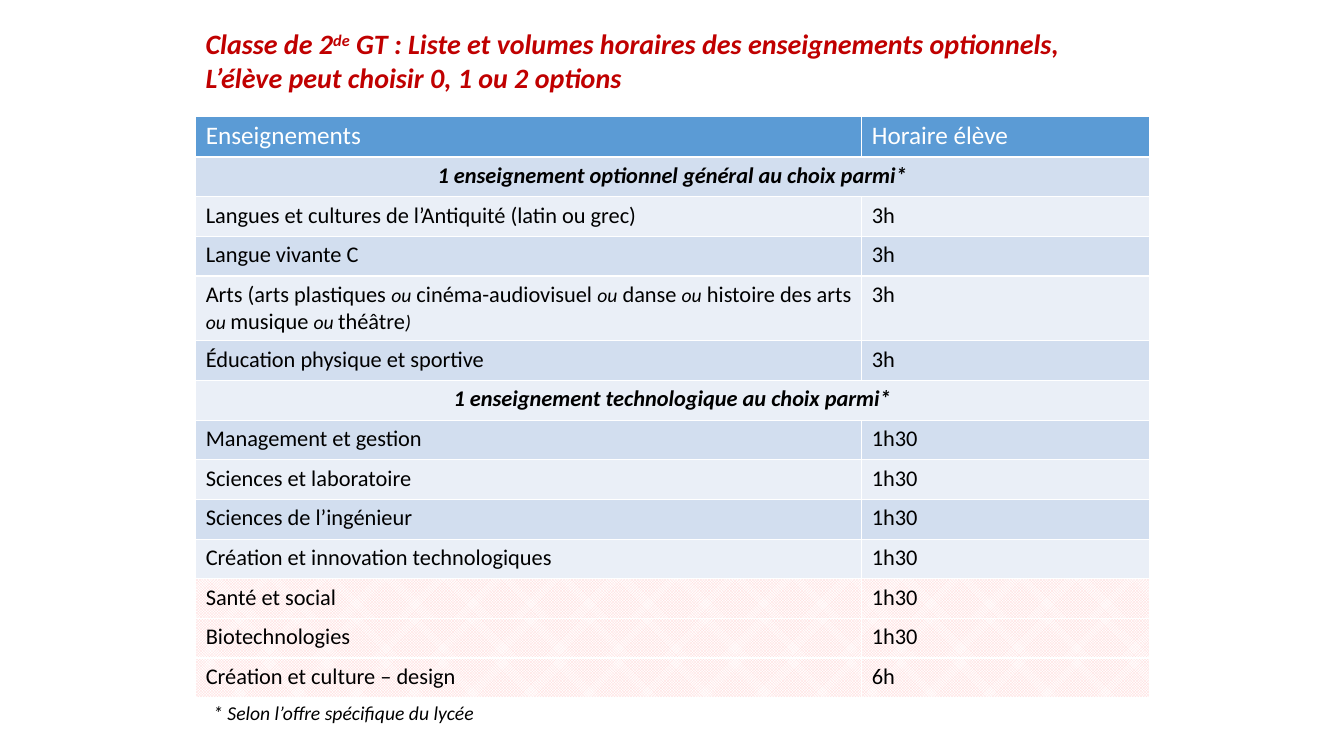
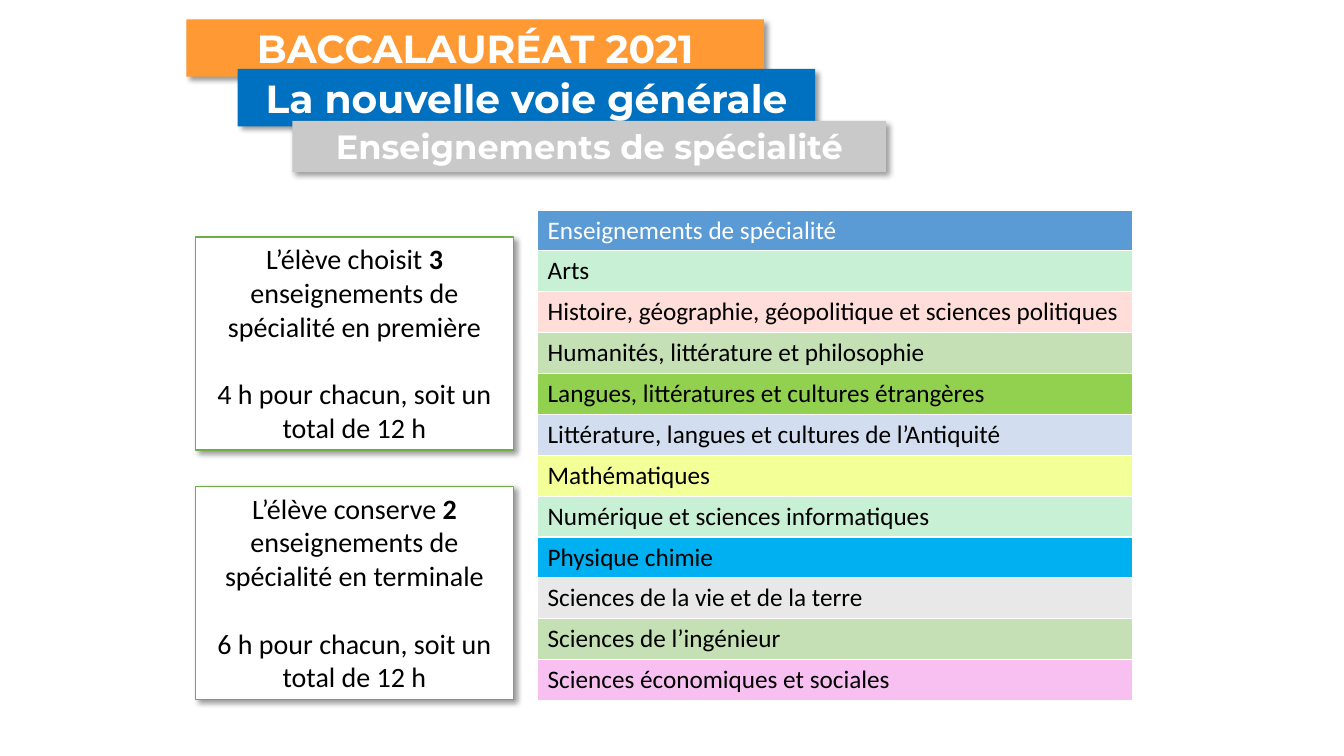
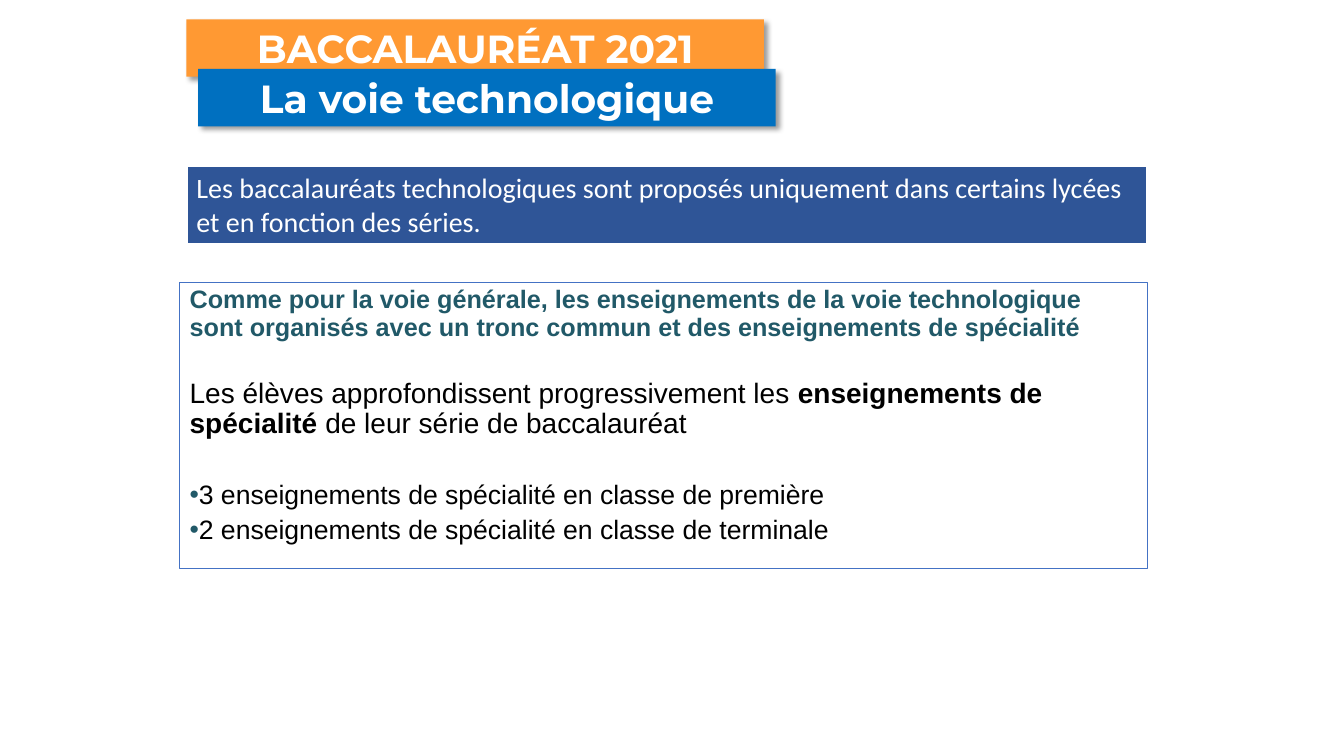
from lxml import etree
from pptx import Presentation
from pptx import util as u
from pptx.dml.color import RGBColor
from pptx.enum import dml, shapes, text
from pptx.oxml import ns

COLUMNS, ROWS = 160, 90  # grid squares of a twelfth of an inch
COLORS = {
    "white": "FFFFFF", "black": "000000", "red": "C00000", "header": "5B9BD5",
    "band": "D2DEEF", "pale band": "EAEFF7", "pink check": "FFD5D5",
    "orange": "FF9933", "blue": "0070C0", "grey": "C9C9C9", "navy": "2F5597",
    "green line": "70AD47", "blue line": "4472C4", "teal": "215968",
    "mint": "C8F0D4", "rose": "FFDDD9", "sage": "C5E0B4", "green": "92D050",
    "yellow": "F3FF97", "sky": "00B0F0", "light grey": "E8E8E8", "pink": "F8C0F0",
}
LEFT, CENTER = text.PP_ALIGN.LEFT, text.PP_ALIGN.CENTER


def grid(squares):
    return u.Inches(squares / 12)


def color(name):
    return RGBColor.from_string(COLORS[name])


def add_xml(parent, tag, **attributes):
    return etree.SubElement(parent, ns.qn(tag), attributes)


def write(paragraph, content, align=LEFT, before=0, spacing=None, bullet=None, **style):
    """Write a string, or a list of strings and (string, changes) pairs."""
    paragraph.alignment = align
    paragraph.space_before = u.Pt(before)
    if spacing:
        paragraph.line_spacing = spacing
    if bullet:
        properties = paragraph._p.get_or_add_pPr()
        add_xml(add_xml(properties, "a:buClr"), "a:srgbClr", val=COLORS[bullet])
        add_xml(properties, "a:buFont", typeface="Arial")
        add_xml(properties, "a:buChar", char="•")
    for part in [content] if isinstance(content, str) else content:
        words, changes = (part, {}) if isinstance(part, str) else part
        look = {"font": "Calibri", "size": 16, "color": "black",
                "bold": False, "italic": False, "baseline": None, **style, **changes}
        run = paragraph.add_run()
        run.text = words
        run.font.name = look["font"]
        run.font.size = u.Pt(look["size"])
        run.font.bold, run.font.italic = look["bold"], look["italic"]
        run.font.color.rgb = color(look["color"])
        if look["baseline"]:
            run._r.get_or_add_rPr().set("baseline", str(look["baseline"] * 1000))


class Deck:
    def __init__(self):
        self.presentation = Presentation()
        self.presentation.slide_width = grid(COLUMNS)
        self.presentation.slide_height = grid(ROWS)
        self.slide = None

    def new_slide(self):
        self.slide = self.presentation.slides.add_slide(self.presentation.slide_layouts[6])

    def fill_frame(self, shape, paragraphs, **style):
        frame = shape.text_frame
        frame.word_wrap = True
        frame.vertical_anchor = text.MSO_ANCHOR.TOP
        for index, (content, changes) in enumerate(paragraphs):
            paragraph = frame.add_paragraph() if index else frame.paragraphs[0]
            write(paragraph, content, **{**style, **changes})

    def label(self, place, content, **style):
        box = self.slide.shapes.add_textbox(*map(grid, place))
        self.fill_frame(box, [(content, {})], **style)

    def box(self, place, paragraphs, fill="white", line=None, width=1, shadow=False, **style):
        shape = self.slide.shapes.add_shape(shapes.MSO_SHAPE.RECTANGLE, *map(grid, place))
        shape.fill.solid()
        shape.fill.fore_color.rgb = color(fill)
        if line:
            shape.line.color.rgb = color(line)
            shape.line.width = u.Pt(width)
        else:
            shape.line.fill.background()
        shape.shadow.inherit = False
        if shadow:
            effects = shape._element.spPr.find(ns.qn("a:effectLst"))
            outer = add_xml(effects, "a:outerShdw", blurRad="50800", dist="38100",
                            dir="2700000", algn="tl", rotWithShape="0")
            tint = add_xml(outer, "a:srgbClr", val=COLORS["black"])
            add_xml(tint, "a:alpha", val="40000")
        self.fill_frame(shape, paragraphs, **style)

    def banner(self, left, top, title, fill, width=68.76, height=6.84, size=28):
        self.box((left, top, width, height), [(title, {})], fill=fill, shadow=True,
                 align=CENTER, font="Montserrat", size=size, color="white", bold=True)

    def bac_title(self, left, subtitle):
        self.banner(22.2, 2.3, "BACCALAURÉAT 2021", "orange")
        self.banner(left, 8.2, subtitle, "blue")

    def table(self, left, top, widths, heights):
        frame = self.slide.shapes.add_table(len(heights), len(widths), grid(left), grid(top),
                                            grid(sum(widths)), grid(sum(heights)))
        for column, width in zip(frame.table.columns, widths):
            column.width = grid(width)
        for row, height in zip(frame.table.rows, heights):
            row.height = grid(height)
        return frame.table

    def cell(self, cell, content, fill, checked=False, **style):
        if checked:
            cell.fill.patterned()
            cell.fill.pattern = dml.MSO_PATTERN.SMALL_CHECKER_BOARD
            cell.fill.back_color.rgb = color("white")
        else:
            cell.fill.solid()
        cell.fill.fore_color.rgb = color(fill)
        write(cell.text_frame.paragraphs[0], content, **style)


def options_slide(deck):
    deck.new_slide()
    small = {"size": 14, "italic": True}
    arts = ["Arts (arts plastiques ", ("ou", small), " cinéma-audiovisuel ", ("ou", small),
            " danse ", ("ou", small), " histoire des arts ", ("ou ", small), "musique ",
            ("ou ", small), "théâtre", (")", small)]
    # A row without hours is a section heading across both columns
    rows = [
        ("Enseignements", "Horaire élève"),
        ("1 enseignement optionnel général au choix parmi*", None),
        ("Langues et cultures de l’Antiquité (latin ou grec)", "3h"),
        ("Langue vivante C", "3h"),
        (arts, "3h"),
        ("Éducation physique et sportive", "3h"),
        ("1 enseignement technologique au choix parmi*", None),
        ("Management et gestion", "1h30"),
        ("Sciences et laboratoire", "1h30"),
        ("Sciences de l’ingénieur", "1h30"),
        ("Création et innovation technologiques", "1h30"),
        ("Santé et social", "1h30"),
        ("Biotechnologies", "1h30"),
        ("Création et culture – design", "6h"),
    ]
    first_checked = 11
    heights = [4.9] + [7.56 if name is arts else 4.72 for name, hours in rows[1:]]
    table = deck.table(23.3, 13.8, [79.3, 34.2], heights)
    for index, (name, hours) in enumerate(rows):
        checked = index >= first_checked
        fill = "pink check" if checked else "band" if index % 2 else "pale band"
        style = {}
        if index == 0:
            fill, style = "header", {"size": 18, "color": "white"}
        if hours is None:
            table.cell(index, 0).merge(table.cell(index, 1))
            style = {"align": CENTER, "bold": True, "italic": True}
        deck.cell(table.cell(index, 0), name, fill, checked, **style)
        if hours:
            deck.cell(table.cell(index, 1), hours, fill, checked, **style)

    # Footnote and title
    deck.label((24.2, 82.9, 113.4, 6), "* Selon l’offre spécifique du lycée", **small)
    deck.label((23.3, 2.6, 104.9, 9.3),
               ["Classe de 2", ("de", {"baseline": 30}),
                " GT : Liste et volumes horaires des enseignements optionnels, "
                "L’élève peut choisir 0, 1 ou 2 options"],
               size=20, color="red", bold=True, italic=True)


def general_slide(deck):
    deck.new_slide()
    deck.bac_title(28.3, "La nouvelle voie générale")
    subjects = [
        ("Enseignements de spécialité", "header"),
        ("Arts", "mint"),
        ("Histoire, géographie, géopolitique et sciences politiques", "rose"),
        ("Humanités, littérature et philosophie", "sage"),
        ("Langues, littératures et cultures étrangères", "green"),
        ("Littérature, langues et cultures de l’Antiquité", "band"),
        ("Mathématiques", "yellow"),
        ("Numérique et sciences informatiques", "mint"),
        ("Physique chimie", "sky"),
        ("Sciences de la vie et de la terre", "light grey"),
        ("Sciences de l’ingénieur", "sage"),
        ("Sciences économiques et sociales", "pink"),
    ]
    table = deck.table(64, 25, [70.8], [4.87] * len(subjects))
    for index, (subject, fill) in enumerate(subjects):
        deck.cell(table.cell(index, 0), subject, fill, size=18,
                  color="black" if index else "white")
    deck.banner(34.8, 14.4, "Enseignements de spécialité", "grey", 70.7, 6.1, 24)

    # Choices per year
    choices = [(28.2, "choisit", "3", "première", "4"), (57.9, "conserve", "2", "terminale", "6")]
    for top, verb, count, year, hours in choices:
        deck.box((23.3, top, 37.8, 25.4),
                 [([f"L’élève {verb} ", (count, {"bold": True}),
                    f" enseignements de spécialité en {year}"], {}),
                  (f"{hours} h pour chacun, soit un total de 12 h", {"before": 24.4})],
                 line="green line", shadow=True, align=CENTER, size=20)


def technology_slide(deck):
    deck.new_slide()
    deck.bac_title(23.6, "La voie technologique")
    bullet = {"size": 19, "bullet": "teal"}
    deck.box((21.4, 33.6, 115.2, 34.1), [
        ("Comme pour la voie générale, les enseignements de la voie technologique "
         "sont organisés avec un tronc commun et des enseignements de spécialité",
         {"size": 18, "color": "teal", "bold": True}),
        (["Les élèves approfondissent progressivement les ",
          ("enseignements de spécialité", {"bold": True}),
          " de leur série de baccalauréat"], {"before": 27}),
        ("3 enseignements de spécialité en classe de première", {"before": 30, **bullet}),
        ("2 enseignements de spécialité en classe de terminale", {"before": 4.5, **bullet}),
    ], line="blue line", font="Arial", size=20, spacing=0.9)
    deck.box((22.2, 19.7, 114.4, 9.3),
             [("Les baccalauréats technologiques sont proposés uniquement dans certains "
               "lycées et en fonction des séries.", {})],
             fill="navy", line="white", width=1.5, size=20, color="white")


def main():
    deck = Deck()
    options_slide(deck)
    general_slide(deck)
    technology_slide(deck)
    deck.presentation.save("out.pptx")


if __name__ == "__main__":
    main()
